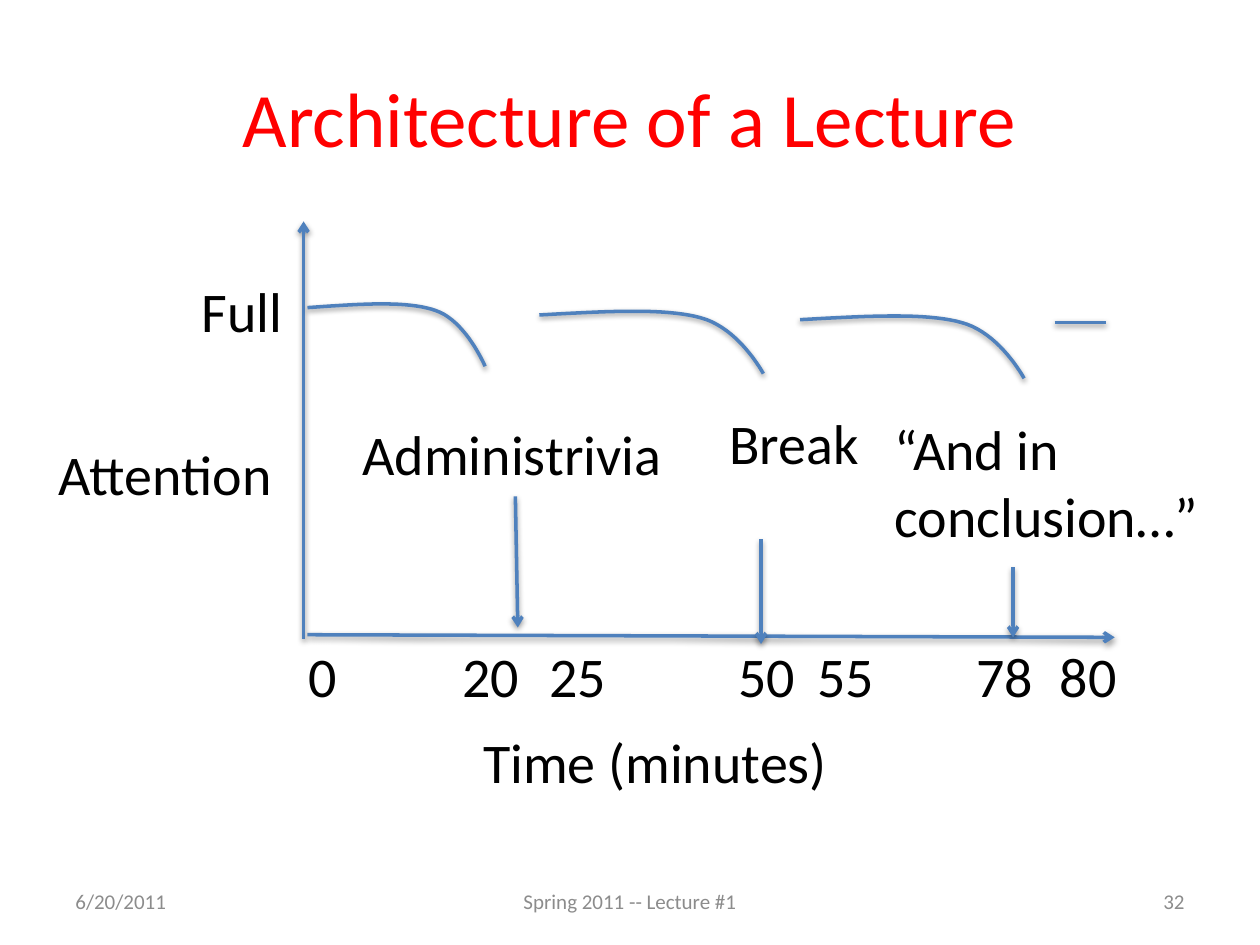
from lxml import etree
from pptx import Presentation
from pptx.dml.color import RGBColor
from pptx.enum.shapes import MSO_CONNECTOR
from pptx.enum.text import MSO_ANCHOR, MSO_AUTO_SIZE, PP_ALIGN
from pptx.oxml.ns import qn
from pptx.util import Pt

STRAIGHT = MSO_CONNECTOR.STRAIGHT
TOP, MIDDLE = MSO_ANCHOR.TOP, MSO_ANCHOR.MIDDLE
LEFT, CENTER, RIGHT = PP_ALIGN.LEFT, PP_ALIGN.CENTER, PP_ALIGN.RIGHT
FIT_SHAPE = MSO_AUTO_SIZE.SHAPE_TO_FIT_TEXT

RED = RGBColor(0xFF, 0x00, 0x00)
BLACK = RGBColor(0x00, 0x00, 0x00)
GRAY = RGBColor(0x8C, 0x8C, 0x8C)
BLUE = RGBColor(0x4F, 0x81, 0xBD)

# Attention curve as two joined Bezier segments: (fraction of width, offset in points)
CURVE = [(0, 0), (0.28, -2), (0.56, -4.2), (0.72, 1.6),
         (0.89, 7.2), (1, 33.5), (1, 33.5)]
STEPS = 20


def bezier(controls, t):
    weights = ((1 - t) ** 3, 3 * t * (1 - t) ** 2, 3 * t ** 2 * (1 - t), t ** 3)
    return tuple(sum(weight * control[axis] for weight, control in zip(weights, controls))
                 for axis in (0, 1))


class LectureSlide:
    font = "Calibri"
    line_width = 2

    def __init__(self, slide):
        self.slide = slide

    def set_text(self, shape, text, size, color, align, anchor):
        frame = shape.text_frame
        frame.text = text
        frame.vertical_anchor = anchor
        for paragraph in frame.paragraphs:
            paragraph.alignment = align
            for run in paragraph.runs:
                run.font.name = self.font
                run.font.size = Pt(size)
                run.font.color.rgb = color
        return frame

    def title(self, text, left, top, width, height):
        shape = self.slide.shapes.title
        shape.left, shape.top = Pt(left), Pt(top)
        shape.width, shape.height = Pt(width), Pt(height)
        self.set_text(shape, text, 44, RED, CENTER, MIDDLE)

    def text_box(self, left, top, width, height):
        return self.slide.shapes.add_textbox(Pt(left), Pt(top), Pt(width), Pt(height))

    def label(self, text, left, top, width, height=46):
        frame = self.set_text(self.text_box(left, top, width, height),
                              text, 32, BLACK, LEFT, TOP)
        frame.word_wrap = False
        frame.auto_size = FIT_SHAPE

    def footer(self, text, left, width, align):
        frame = self.set_text(self.text_box(left, 500.5, width, 28.75),
                              text, 12, GRAY, align, MIDDLE)
        frame.word_wrap = True

    def style_line(self, shape):
        shape.line.color.rgb = BLUE
        shape.line.width = Pt(self.line_width)
        effects = etree.SubElement(shape.element.spPr, qn("a:effectLst"))
        shadow = etree.SubElement(effects, qn("a:outerShdw"), blurRad="40000",
                                  dist="20000", dir="5400000", rotWithShape="0")
        color = etree.SubElement(shadow, qn("a:srgbClr"), val=str(BLACK))
        etree.SubElement(color, qn("a:alpha"), val="38000")

    def line(self, x1, y1, x2, y2, arrow=True):
        connector = self.slide.shapes.add_connector(STRAIGHT, Pt(x1), Pt(y1), Pt(x2), Pt(y2))
        self.style_line(connector)
        if arrow:
            outline = connector.element.spPr.find(qn("a:ln"))
            etree.SubElement(outline, qn("a:tailEnd"), type="arrow")

    def curve(self, left, top, width):
        controls = [(left + fraction * width, top + offset) for fraction, offset in CURVE]
        points = [bezier(controls[start:start + 4], step / STEPS)
                  for start in (0, 3) for step in range(1, STEPS + 1)]
        builder = self.slide.shapes.build_freeform(Pt(left), Pt(top))
        builder.add_line_segments([(Pt(x), Pt(y)) for x, y in points], close=False)
        shape = builder.convert_to_shape()
        shape.fill.background()
        self.style_line(shape)


def main():
    presentation = Presentation()
    presentation.slide_width, presentation.slide_height = Pt(720), Pt(540)
    page = LectureSlide(presentation.slides.add_slide(presentation.slide_layouts[5]))

    # Title and footer
    page.title("Architecture of a Lecture", 36, 21.6, 648, 90)
    page.footer("6/20/2011", 36, 168, LEFT)
    page.footer("Spring 2011 -- Lecture #1", 246, 228, CENTER)
    page.footer("32", 516, 168, RIGHT)

    # Axes and their names
    page.label("Attention", 26.5, 247.5, 139)
    page.label("Full", 108, 154.5, 61)
    page.label("Time (minutes)", 269, 412, 213)
    page.line(173.5, 365, 173.5, 126.5)
    page.line(175.7, 362.7, 637, 364.2)

    # Time marks
    for minute, left in ((0, 169), (20, 257), (25, 306.7), (50, 414.7),
                         (55, 460), (78, 551), (80, 598.5)):
        page.label(str(minute), left, 363, 47.5 if minute else 31)

    # Attention level in each part of the lecture
    for left, top, width in ((175.7, 175.8, 101.5), (308.2, 180, 128), (457.2, 182.7, 128)):
        page.curve(left, top, width)
    page.line(602.6, 184.2, 632.2, 184.2, arrow=False)

    # Events between the parts
    page.label("Administrivia", 200, 236, 190)
    page.line(294.5, 283.7, 295.9, 358.6)
    page.label("Break", 409.7, 229.7, 89)
    page.line(434.9, 308.2, 434.9, 368)
    page.label("“And in\vconclusion…”", 504, 233.3, 190, 85)
    page.line(578.9, 324, 578.9, 364.3)

    presentation.save("out.pptx")


if __name__ == "__main__":
    main()
